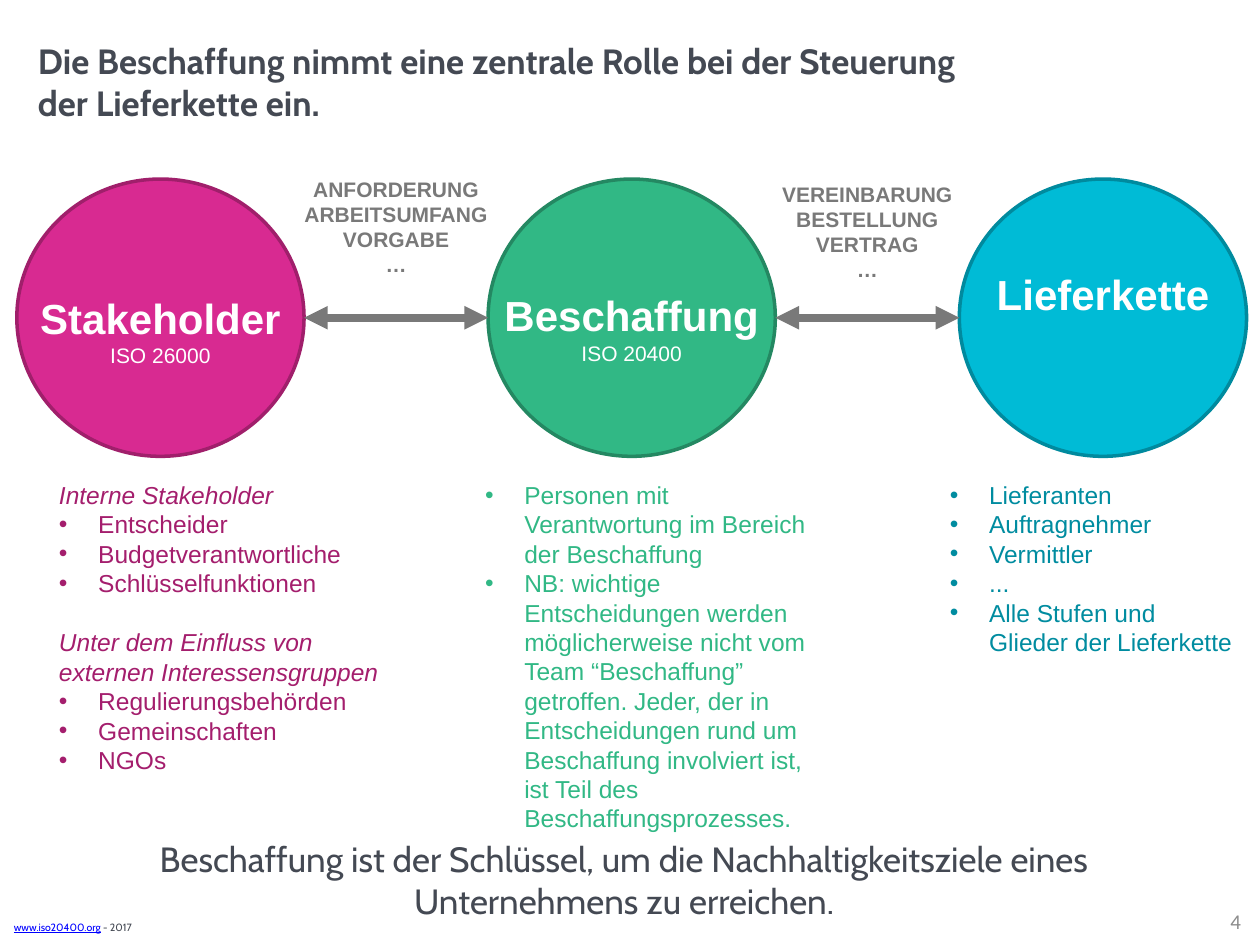
from dataclasses import dataclass

from lxml import etree
from pptx import Presentation
from pptx import util as u
from pptx.dml import color
from pptx.enum import shapes, text
from pptx.oxml import ns


@dataclass(frozen=True)
class Theme:
    ink: str = "444953"
    grey: str = "797979"
    pale: str = "8C8C8C"
    white: str = "FFFFFF"
    link: str = "0000FF"
    display: str = "Cabin"
    body: str = "Arial"
    number: str = "Calibri"
    heading: int = 20
    label: int = 24
    list: int = 14
    caption: int = 12
    footer: int = 6


THEME = Theme()
CENTER, RIGHT = text.PP_ALIGN.CENTER, text.PP_ALIGN.RIGHT

CIRCLE_LEFT, CIRCLE_TOP, CIRCLE_STEP = 0.34, 3.61, 9.5
CIRCLE_WIDTH, CIRCLE_HEIGHT = 5.79, 5.59

# Label boxes are (offset from circle top, width, height)
STAGES = [
    dict(fill="D82A91", line="A01F6B", name="Stakeholder", norm="ISO 26000",
         label=(2.16, 5.41, 1.8), color="A41E6D", box=(0.94, 9.55, 7.19, 6.25),
         groups=[("Interne Stakeholder",
                  ["Entscheider", "Budgetverantwortliche", "Schlüsselfunktionen"]),
                 ("Unter dem Einfluss von externen Interessensgruppen",
                  ["Regulierungsbehörden", "Gemeinschaften", "NGOs"])]),
    dict(fill="31B885", line="248862", name="Beschaffung", norm="ISO 20400",
         label=(2.11, 5.69, 1.8), color="31B885", box=(9.53, 9.55, 7.19, 7.44),
         groups=[(None, [
             "Personen mit Verantwortung im Bereich der Beschaffung",
             "NB: wichtige Entscheidungen werden möglicherweise nicht vom Team "
             "“Beschaffung” getroffen. Jeder, der in Entscheidungen rund um "
             "Beschaffung involviert ist, ist Teil des Beschaffungsprozesses."])]),
    dict(fill="00BBD6", line="008A9E", name="Lieferkette", norm=None,
         label=(1.67, 8.99, 1.27), color="008CA0", box=(18.9, 9.55, 6.25, 3.84),
         groups=[(None, ["Lieferanten", "Auftragnehmer", "Vermittler", "...",
                         "Alle Stufen und Glieder der Lieferkette"])]),
]

# Caption lines with the top of their box
EXCHANGES = [
    (["ANFORDERUNG", "ARBEITSUMFANG", "VORGABE", "…"], 3.43),
    (["VEREINBARUNG", "BESTELLUNG", "VERTRAG", "…"], 3.53),
]


def rgb(value):
    return color.RGBColor.from_string(value)


def apply_format(target, values):
    for name, value in values.items():
        if name == "color":
            target.color.rgb = rgb(value)
        else:
            setattr(target, name, value)


def add_box(slide, box, wrap=True):
    frame = slide.shapes.add_textbox(*map(u.Cm, box)).text_frame
    apply_format(frame, dict(word_wrap=wrap,
                             auto_size=text.MSO_AUTO_SIZE.SHAPE_TO_FIT_TEXT))
    return frame


def write(paragraph, words, size, ink, family=THEME.body, layout=None, **extra):
    apply_format(paragraph, layout or {})
    run = paragraph.add_run()
    run.text = words
    apply_format(run.font, dict(size=u.Pt(size), name=family, color=ink, **extra))


def next_paragraph(frame):
    first = frame.paragraphs[0]
    return frame.add_paragraph() if first.runs else first


def add_bullet(paragraph):
    properties = paragraph._p.get_or_add_pPr()
    indent = u.Cm(0.79)
    properties.set("marL", str(indent))
    properties.set("indent", str(-indent))
    etree.SubElement(properties, ns.qn("a:buFont")).set("typeface", THEME.body)
    etree.SubElement(properties, ns.qn("a:buChar")).set("char", "•")


def build_title(slide, box):
    title = slide.shapes.title
    apply_format(title, dict(zip(("left", "top", "width", "height"), map(u.Cm, box))))
    frame = title.text_frame
    apply_format(frame, dict(word_wrap=True, auto_size=text.MSO_AUTO_SIZE.NONE,
                             vertical_anchor=text.MSO_ANCHOR.MIDDLE))
    write(frame.paragraphs[0], "Die Beschaffung nimmt eine zentrale Rolle bei der "
          "Steuerung der Lieferkette ein.", THEME.heading, THEME.ink, THEME.display,
          dict(alignment=text.PP_ALIGN.LEFT), bold=True)


def build_circle(slide, box, stage):
    left, top, width, _ = box
    circle = slide.shapes.add_shape(shapes.MSO_SHAPE.OVAL, *map(u.Cm, box))
    circle.shadow.inherit = False
    circle.fill.solid()
    circle.fill.fore_color.rgb = rgb(stage["fill"])
    apply_format(circle.line, dict(color=stage["line"], width=u.Pt(2)))

    # Name and standard, centred on the circle
    offset, label_width, label_height = stage["label"]
    frame = add_box(slide, (left + (width - label_width) / 2, top + offset,
                            label_width, label_height), wrap=stage["norm"] is None)
    centred = dict(alignment=CENTER)
    write(frame.paragraphs[0], stage["name"], THEME.label, THEME.white,
          layout=centred, bold=True)
    if stage["norm"]:
        write(frame.add_paragraph(), stage["norm"], THEME.caption, THEME.white,
              layout=centred)


def build_details(slide, box, stage):
    frame = add_box(slide, box)
    for position, (heading, items) in enumerate(stage["groups"]):
        if heading:
            gap = dict(space_before=u.Pt(17)) if position else {}
            write(next_paragraph(frame), heading, THEME.list, stage["color"],
                  layout=gap, italic=True)
        for item in items:
            paragraph = next_paragraph(frame)
            add_bullet(paragraph)
            write(paragraph, item, THEME.list, stage["color"])


def build_exchange(slide, left, right, middle, lines, caption_top):
    # Double-headed arrow
    arrow = slide.shapes.add_connector(
        shapes.MSO_CONNECTOR.STRAIGHT, *map(u.Cm, (left, middle, right, middle)))
    apply_format(arrow.line, dict(color=THEME.grey, width=u.Pt(4.5)))
    outline = arrow.line._get_or_add_ln()
    for end in ("a:headEnd", "a:tailEnd"):
        etree.SubElement(outline, ns.qn(end)).set("type", "triangle")
    etree.SubElement(arrow._element.spPr, ns.qn("a:effectLst"))

    # Caption centred over the arrow
    width = 7.19
    frame = add_box(slide, ((left + right - width) / 2, caption_top, width, 2.31))
    paragraph = frame.paragraphs[0]
    for position, line in enumerate(lines):
        if position:
            paragraph.add_line_break()
        write(paragraph, line, THEME.caption, THEME.grey,
              layout=dict(alignment=CENTER), bold=True)


def build_closing(slide, box):
    write(add_box(slide, box).paragraphs[0],
          "Beschaffung ist der Schlüssel, um die Nachhaltigkeitsziele eines "
          "Unternehmens zu erreichen.", THEME.heading, THEME.ink, THEME.display,
          dict(alignment=CENTER))


def build_footer(slide, source_box, number_box):
    source = add_box(slide, source_box).paragraphs[0]
    write(source, "www.iso20400.org", THEME.footer, THEME.link, THEME.display,
          underline=True)
    write(source, " - 2017", THEME.footer, THEME.ink, THEME.display)
    frame = add_box(slide, number_box)
    apply_format(frame, dict(auto_size=text.MSO_AUTO_SIZE.NONE,
                             vertical_anchor=text.MSO_ANCHOR.MIDDLE))
    write(frame.paragraphs[0], "4", THEME.caption, THEME.pale, THEME.number,
          dict(alignment=RIGHT))


def main():
    presentation = Presentation()
    presentation.slide_width, presentation.slide_height = u.Cm(25.4), u.Cm(19.05)
    slide = presentation.slides.add_slide(presentation.slide_layouts[5])

    build_title(slide, (0.51, 1.09, 19.51, 1.09))
    lefts = [CIRCLE_LEFT + CIRCLE_STEP * column for column in range(len(STAGES))]
    for left, stage in zip(lefts, STAGES):
        build_circle(slide, (left, CIRCLE_TOP, CIRCLE_WIDTH, CIRCLE_HEIGHT), stage)
        build_details(slide, stage["box"], stage)
    for left, right, (lines, top) in zip(lefts, lefts[1:], EXCHANGES):
        build_exchange(slide, left + CIRCLE_WIDTH, right,
                       CIRCLE_TOP + CIRCLE_HEIGHT / 2, lines, top)
    build_closing(slide, (0.89, 16.76, 23.39, 1.96))
    build_footer(slide, (0.03, 18.44, 16.43, 0.51), (19.35, 18.08, 5.92, 0.97))
    presentation.save("out.pptx")


if __name__ == "__main__":
    main()
